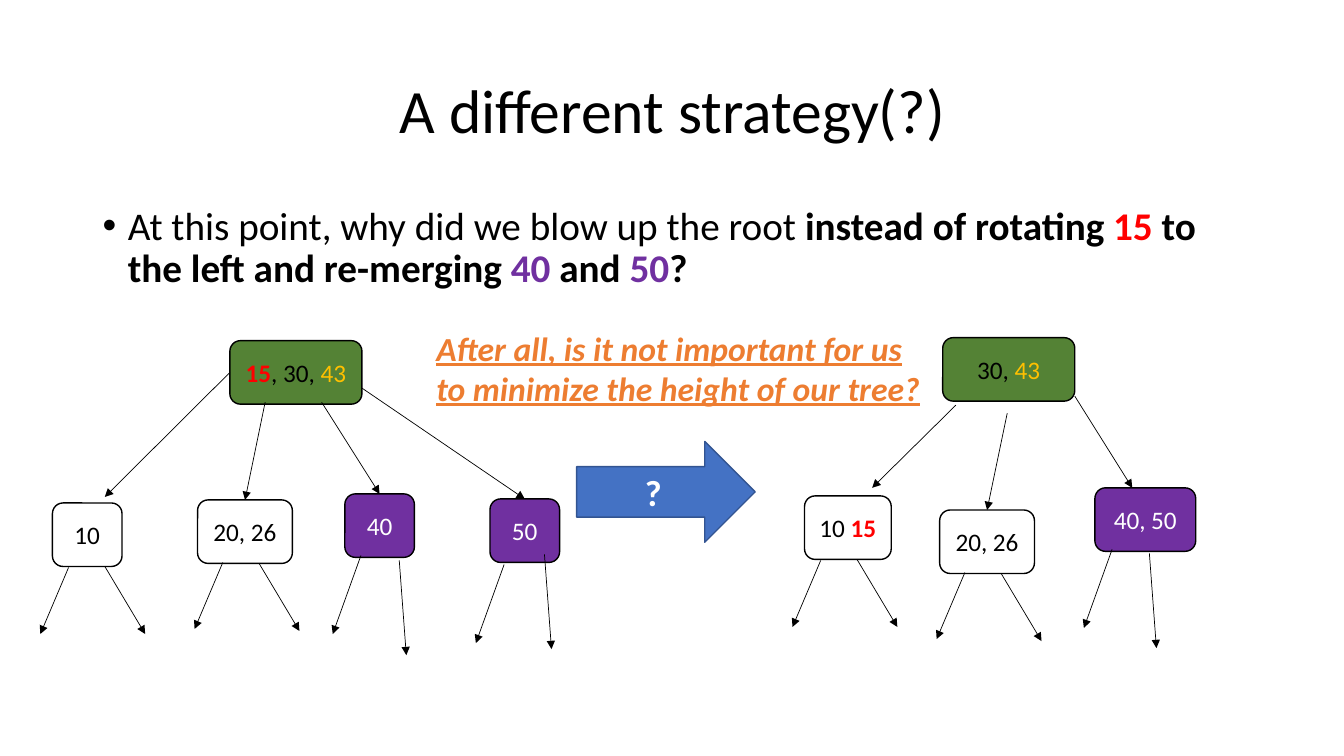
from pptx import Presentation
from pptx.dml.color import RGBColor
from pptx.enum.shapes import MSO_CONNECTOR, MSO_SHAPE
from pptx.enum.text import MSO_ANCHOR as Anchor, PP_ALIGN as Align
from pptx.oxml.ns import qn
from pptx.util import Inches, Pt
from lxml.etree import SubElement

BLACK, WHITE, RED = "000000", "FFFFFF", "FF0000"
GREEN, PURPLE, GOLD = "548235", "7030A0", "FFC000"
BLUE, DARK_BLUE, ORANGE = "4472C4", "325491", "ED7D31"
NODE_HEIGHT = 0.63
TOP, LEFT = 0, 1

# Reach of the left and right subtree arrows below a node
LIGHT_REACH = ((-0.28, 0.66), (0.4, 0.67))
PURPLE_REACH = ((-0.28, 0.78), (0.07, 0.94))

# Each tree: root box, then children as
# (x, y, width, runs, fill, subtree arrow starts in the node, edge start, edge end)
# An edge start of None joins the root's left side; an end of None joins the child's top.
BEFORE_TREE = (
    (2.28, 3.38, 1.31, [("15", RED, True), (", 30, ", BLACK), ("43", GOLD)], GREEN),
    [
        (0.52, 4.99, 0.69, [("10", BLACK)], None,
         ((0.16, 0.64), (0.52, 0.63)), None, (1.04, 4.93)),
        (1.96, 4.96, 0.94, [("20, 26", BLACK)], None,
         ((0.25, 0.62), (0.61, 0.63)), (2.63, 3.99), None),
        (3.42, 4.9, 0.69, [("40", WHITE)], PURPLE,
         ((0.16, 0.61), (0.54, 0.66)), (3.19, 3.99), None),
        (4.86, 4.95, 0.69, [("50", WHITE)], PURPLE,
         ((0.14, 0.65), (0.54, 0.55)), (3.59, 3.85), None),
    ],
)
AFTER_TREE = (
    (9.35, 3.35, 1.31, [("30, ", BLACK), ("43", GOLD)], GREEN),
    [
        (7.98, 4.92, 0.86, [("10 ", BLACK), ("15", RED, True)], None,
         ((0.16, 0.64), (0.52, 0.63)), (9.48, 4.02), (8.65, 4.84)),
        (9.32, 5.06, 0.94, [("20, 26", BLACK)], None,
         ((0.25, 0.62), (0.61, 0.63)), (9.99, 4.1), None),
        (10.86, 4.84, 1, [("40, 50", WHITE)], PURPLE,
         ((0.17, 0.61), (0.54, 0.65)), (10.66, 3.93), (11.23, 4.84)),
    ],
)


def color(hex_string):
    return RGBColor.from_string(hex_string)


def write_runs(paragraph, runs, size, **formats):
    """Add runs given as (text, colour) or (text, colour, bold)."""
    for text, hex_string, *bold in runs:
        run = paragraph.add_run()
        run.text = text
        run.font.color.rgb = color(hex_string)
        values = {"name": "Calibri", "size": Pt(size), "bold": bool(bold), **formats}
        for name, value in values.items():
            setattr(run.font, name, value)


def add_text(slide, box, runs, size, anchor=Anchor.TOP, **formats):
    frame = slide.shapes.add_textbox(*map(Inches, box)).text_frame
    frame.word_wrap = True
    frame.vertical_anchor = anchor
    paragraph = frame.paragraphs[0]
    write_runs(paragraph, runs, size, **formats)
    return paragraph


def add_bullet(paragraph):
    properties = paragraph._p.get_or_add_pPr()
    properties.set("marL", str(Inches(0.25)))
    properties.set("indent", str(Inches(-0.25)))
    SubElement(properties, qn("a:buFont"), typeface="Arial")
    SubElement(properties, qn("a:buChar"), char="•")


def add_box(slide, kind, box, runs, size, fill, line):
    shape = slide.shapes.add_shape(kind, *map(Inches, box))
    shape.shadow.inherit = False
    if fill:
        shape.fill.solid()
        shape.fill.fore_color.rgb = color(fill)
    else:
        shape.fill.background()
    shape.line.color.rgb = color(line)
    shape.line.width = Pt(1)
    shape.text_frame.vertical_anchor = Anchor.MIDDLE
    paragraph = shape.text_frame.paragraphs[0]
    paragraph.alignment = Align.CENTER
    write_runs(paragraph, runs, size)
    return shape


def add_node(slide, x, y, width, runs, fill):
    box = (x, y, width, NODE_HEIGHT)
    return add_box(slide, MSO_SHAPE.ROUNDED_RECTANGLE, box, runs, 18, fill, BLACK)


def add_arrow(slide, start, end):
    arrow = slide.shapes.add_connector(
        MSO_CONNECTOR.STRAIGHT, *map(Inches, (*start, *end)))
    arrow.line.color.rgb = color(BLACK)
    arrow.line.width = Pt(0.5)
    SubElement(arrow.line._get_or_add_ln(), qn("a:tailEnd"), type="triangle")
    SubElement(arrow._element.spPr, qn("a:effectLst"))
    return arrow


def add_tree(slide, root_values, children):
    root = add_node(slide, *root_values)
    for x, y, width, runs, fill, starts, edge_start, edge_end in children:
        child = add_node(slide, x, y, width, runs, fill)

        # Edge from the root
        edge = add_arrow(slide, edge_start or root_values[:2], edge_end or (x, y))
        if edge_start is None:
            edge.begin_connect(root, LEFT)
        if edge_end is None:
            edge.end_connect(child, TOP)

        # Arrows to the subtrees
        reaches = PURPLE_REACH if fill else LIGHT_REACH
        for (dx, dy), (across, down) in zip(starts, reaches):
            start = (x + dx, y + dy)
            add_arrow(slide, start, (start[0] + across, start[1] + down))


def main():
    presentation = Presentation()
    presentation.slide_width = Inches(13.33)
    presentation.slide_height = Inches(7.5)
    slide = presentation.slides.add_slide(presentation.slide_layouts[6])

    # Title and question
    title = add_text(slide, (0.92, 0.4, 11.5, 1.45),
                     [("A different strategy(?)", BLACK)], 44, Anchor.MIDDLE)
    title.alignment = Align.CENTER
    title.line_spacing = 0.9
    question = add_text(slide, (0.92, 2, 11.5, 1.1), [
        ("At this point, why did we blow up the root ", BLACK),
        ("instead of rotating ", BLACK, True),
        ("15", RED, True),
        (" to the left and re-merging ", BLACK, True),
        ("40", PURPLE, True),
        (" and ", BLACK, True),
        ("50", PURPLE, True),
        ("?", BLACK, True),
    ], 28)
    question.line_spacing = 0.9
    add_bullet(question)

    # Trees before and after, with the arrow between them
    add_box(slide, MSO_SHAPE.RIGHT_ARROW, (5.72, 4.38, 1.77, 1),
            [("?", WHITE, True)], 26, BLUE, DARK_BLUE)
    for tree in (BEFORE_TREE, AFTER_TREE):
        add_tree(slide, *tree)

    # Remark
    remark = "After all, is it not important for us to minimize the height of our tree?"
    add_text(slide, (4.23, 3.2, 5.03, 0.91), [(remark, ORANGE, True)], 24,
             italic=True, underline=True)

    presentation.save("out.pptx")


if __name__ == "__main__":
    main()
